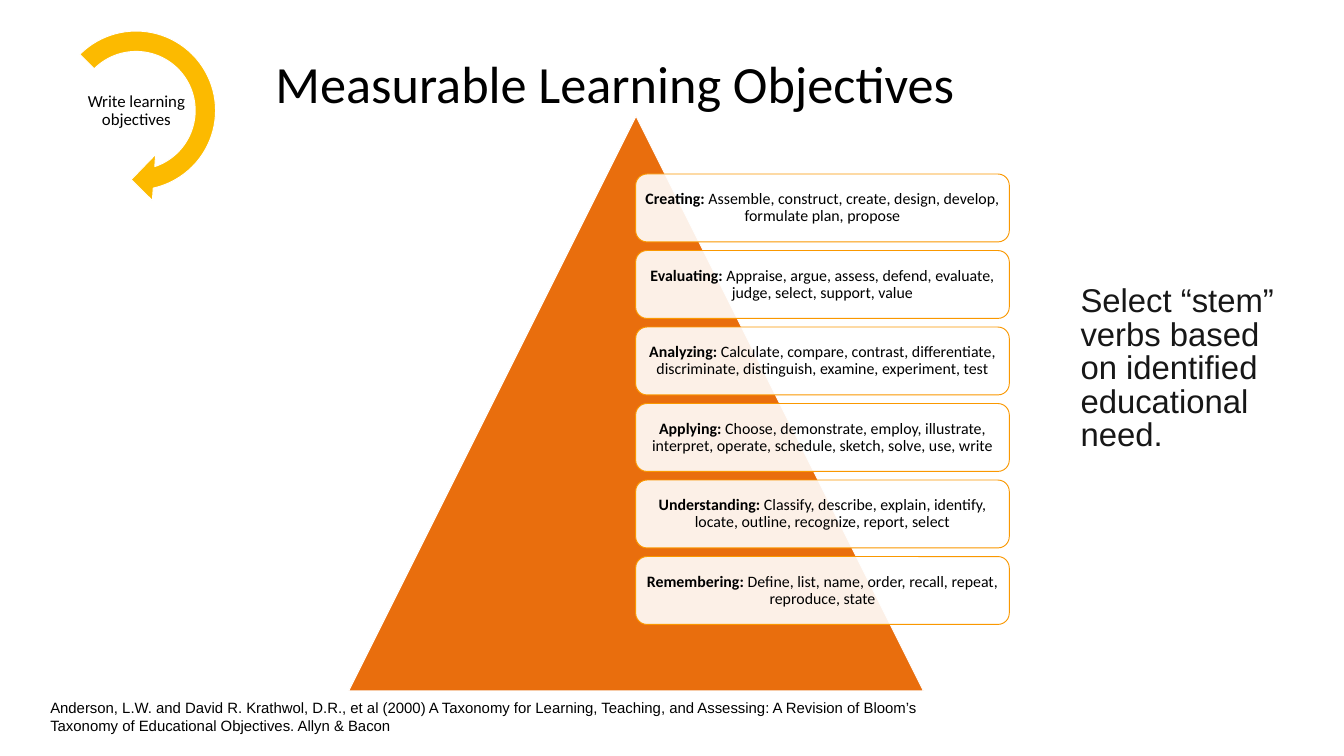
"""Build a slide of measurable learning objectives with a pyramid of verb cards."""
from dataclasses import dataclass
from typing import Any, Optional

from lxml import etree
from pptx import Presentation, util as u
from pptx.dml import color
from pptx.enum import shapes, text
from pptx.oxml import ns

WIDE, HIGH = u.Inches(20), u.Inches(11.25)
HUES = {"ink": "000000", "soft": "171717", "paper": "FFFFFF",
        "gold": "FCBA00", "rust": "E96E0D", "amber": "FA9800"}
SIDES = ("left", "top", "right", "bottom")
KIND, ALIGN, ANCHOR = shapes.MSO_SHAPE, text.PP_ALIGN, text.MSO_ANCHOR


@dataclass
class Box:
    """A frame in percent of the slide's width and height."""
    x: float
    y: float
    w: float
    h: float

    def place(self) -> tuple[int, int, int, int]:
        return (round(self.x * WIDE / 100), round(self.y * HIGH / 100),
                round(self.w * WIDE / 100), round(self.h * HIGH / 100))


@dataclass
class Style:
    """Format values for one block of text."""
    size: float
    face: str = "Calibri"
    hue: str = "ink"
    align: Any = ALIGN.CENTER
    anchor: Any = ANCHOR.MIDDLE
    space: float = 0.9
    pads: tuple[float, ...] = (0.1, 0.05, 0.1, 0.05)


@dataclass
class Level:
    """One level of the taxonomy and its verbs."""
    name: str
    verbs: str


LEVELS = [
    Level("Creating:", "Assemble, construct, create, design, develop, formulate plan, propose"),
    Level("Evaluating:", "Appraise, argue, assess, defend, evaluate, judge, select, support, value"),
    Level("Analyzing:", "Calculate, compare, contrast, differentiate, discriminate, "
          "distinguish, examine, experiment, test"),
    Level("Applying:", "Choose, demonstrate, employ, illustrate, interpret, operate, "
          "schedule, sketch, solve, use, write"),
    Level("Understanding:", "Classify, describe, explain, identify, locate, outline, "
          "recognize, report, select"),
    Level("Remembering:", "Define, list, name, order, recall, repeat, reproduce, state"),
]
CARD, STEP = Box(47.3, 23.02, 27.8, 8.98), 10.12
CARD_STYLE = Style(17, pads=(0.07,) * 4)
NOTES = [
    (Box(6.3, 7.47, 78.95, 7.91), "Measurable Learning Objectives", Style(56)),
    (Box(6.3, 11.29, 7.7, 6.84), "Write learning objectives",
     Style(18, pads=(0.01,) * 4)),
    (Box(3.25, 92, 70.35, 5.69),
     "Anderson, L.W. and David R. Krathwol, D.R., et al (2000) A Taxonomy for "
     "Learning, Teaching, and Assessing: A Revision of Bloom’s Taxonomy of "
     "Educational Objectives. Allyn & Bacon",
     Style(16, "Arial", align=ALIGN.LEFT, anchor=ANCHOR.TOP, space=1.0)),
    (Box(80.4, 56.8, 14.85, 3.56),
     "Select “stem” verbs based on identified educational need.",
     Style(35.2, "Arial", "soft", ALIGN.LEFT, ANCHOR.BOTTOM, 0.85,
           (0, 0.04, 0.07, 0.04))),
]


def tint(name: str) -> color.RGBColor:
    return color.RGBColor.from_string(HUES[name])


def apply(item: Any, values: dict[str, Any]) -> None:
    for key, value in values.items():
        setattr(item, key, value)


def write(shape: Any, runs: list[tuple[str, bool]], style: Style) -> None:
    frame = shape.text_frame
    apply(frame, {"word_wrap": True, "vertical_anchor": style.anchor})
    apply(frame, {f"margin_{side}": u.Inches(pad)
                  for side, pad in zip(SIDES, style.pads)})
    para = frame.paragraphs[0]
    apply(para, {"alignment": style.align, "line_spacing": style.space})
    for words, bold in runs:
        run = para.add_run()
        run.text = words
        apply(run.font, {"size": u.Pt(style.size), "name": style.face, "bold": bold})
        run.font.color.rgb = tint(style.hue)


def draw(slide: Any, kind: Any, box: Box, fill: str, line: str,
         turns: tuple[float, ...] = (), alpha: Optional[int] = None) -> Any:
    shape = slide.shapes.add_shape(kind, *box.place())
    shape.shadow.inherit = False
    for spot, turn in enumerate(turns):
        shape.adjustments[spot] = turn
    shape.fill.solid()
    shape.fill.fore_color.rgb = tint(fill)
    if alpha is not None:
        solid = shape._element.spPr.find(ns.qn("a:solidFill"))
        etree.SubElement(solid[0], ns.qn("a:alpha"), val=str(alpha * 1000))
    shape.line.color.rgb = tint(line)
    shape.line.width = u.Pt(1)
    return shape


def main() -> None:
    deck = Presentation()
    apply(deck, {"slide_width": WIDE, "slide_height": HIGH})
    slide = deck.slides.add_slide(deck.slide_layouts[6])
    draw(slide, KIND.CIRCULAR_ARROW, Box(3.25, 2.4, 13.75, 24.44), "gold", "paper",
         (0.11, 11.42, 45, 135, 0.125))
    draw(slide, KIND.ISOSCELES_TRIANGLE, Box(25.95, 15.38, 42.75, 76), "rust", "paper")
    for row, level in enumerate(LEVELS):
        box = Box(CARD.x, CARD.y + row * STEP, CARD.w, CARD.h)
        card = draw(slide, KIND.ROUNDED_RECTANGLE, box, "paper", "amber", alpha=90)
        write(card, [(level.name, True), (f" {level.verbs}", False)], CARD_STYLE)
    for box, words, style in NOTES:
        write(slide.shapes.add_textbox(*box.place()), [(words, False)], style)
    deck.save("out.pptx")


if __name__ == "__main__":
    main()
